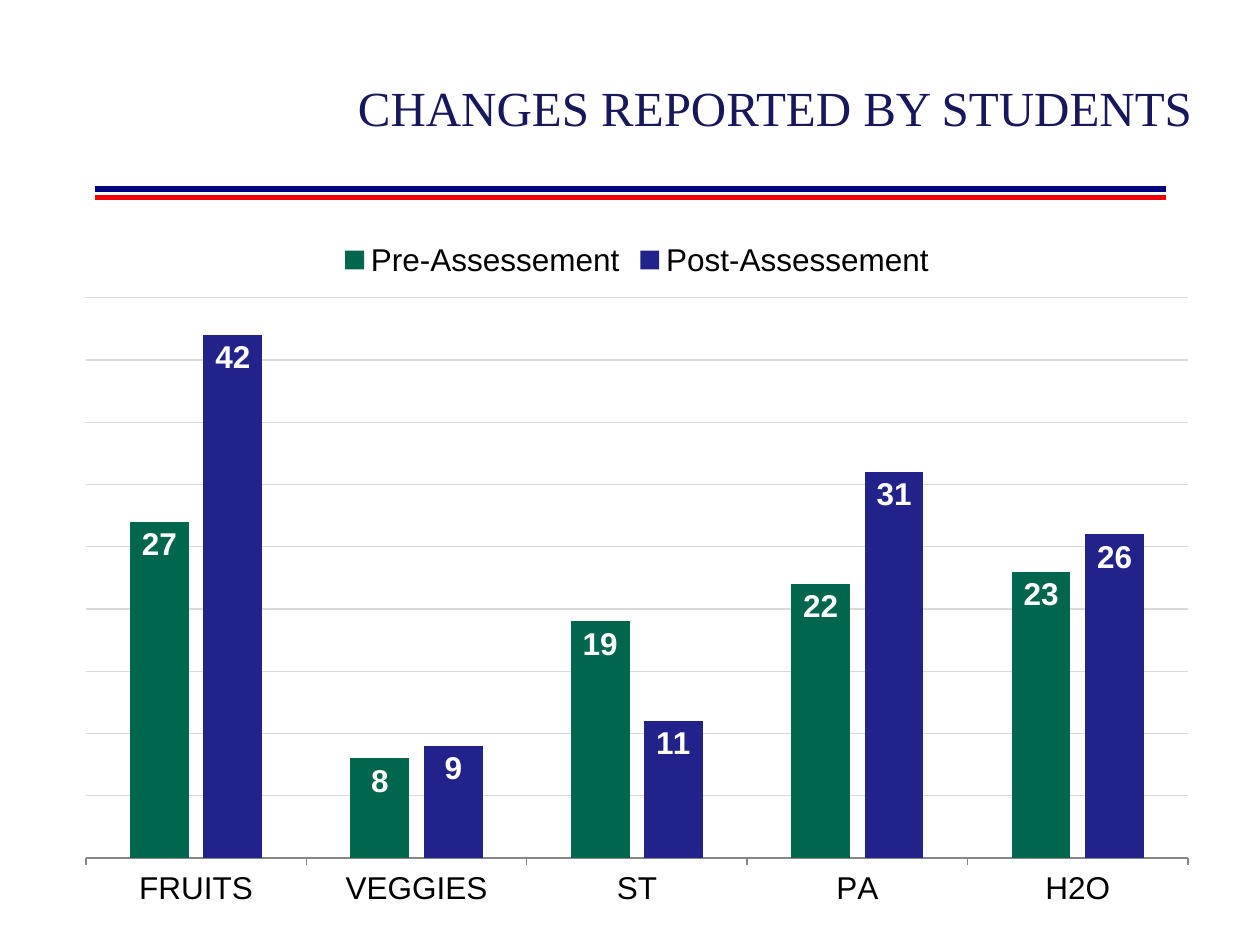
import pptx
import pptx.chart.data
import pptx.dml.color
import pptx.enum.chart
import pptx.enum.shapes
import pptx.enum.text
import pptx.oxml
import pptx.oxml.ns
import pptx.util

Pt = pptx.util.Pt

COLORS = {
    "title": "17175C",
    "rule_blue": "000080",
    "rule_red": "F00000",
    "pre": "00664D",
    "post": "22228B",
    "text": "000000",
    "label": "FFFFFF",
    "grid": "D9D9D9",
    "axis": "878787",
}
CATEGORIES = ["FRUITS", "VEGGIES", "ST", "PA", "H2O"]
SERIES = [
    ("Pre-Assessement", [27, 8, 19, 22, 23], "pre"),
    ("Post-Assessement", [42, 9, 11, 31, 26], "post"),
]


def color(name):
    return pptx.dml.color.RGBColor.from_string(COLORS[name])


def format_font(font, name, size, color_name, bold=False):
    font.name = name
    font.size = Pt(size)
    font.bold = bold
    font.color.rgb = color(color_name)


def add_title(slide, text):
    title = slide.shapes.title
    title.left, title.top = Pt(194.4), Pt(40.3)
    title.width, title.height = Pt(496.8), Pt(41)
    frame = title.text_frame
    frame.word_wrap = False
    frame.auto_size = pptx.enum.text.MSO_AUTO_SIZE.SHAPE_TO_FIT_TEXT
    frame.vertical_anchor = pptx.enum.text.MSO_ANCHOR.MIDDLE
    paragraph = frame.paragraphs[0]
    paragraph.alignment = pptx.enum.text.PP_ALIGN.CENTER
    run = paragraph.add_run()
    run.text = text
    format_font(run.font, "Times New Roman", 28, "title")


def add_rule(slide, top, color_name):
    rule = slide.shapes.add_connector(
        pptx.enum.shapes.MSO_CONNECTOR.STRAIGHT, Pt(54), Pt(top), Pt(666), Pt(top))
    rule.line.color.rgb = color(color_name)
    rule.line.width = Pt(3)
    # An empty effect list removes the theme shadow
    properties = rule._element.spPr
    properties.append(pptx.oxml.parse_xml(
        "<a:effectLst %s/>" % pptx.oxml.ns.nsdecls("a")))


def format_axes(chart):
    category_axis = chart.category_axis
    category_axis.major_tick_mark = pptx.enum.chart.XL_TICK_MARK.OUTSIDE
    category_axis.format.line.color.rgb = color("axis")
    category_axis.format.line.width = Pt(0.75)
    value_axis = chart.value_axis
    value_axis.visible = False
    value_axis.minimum_scale, value_axis.maximum_scale = 0, 45
    value_axis.major_unit = 5
    value_axis.has_major_gridlines = True
    grid_line = value_axis.major_gridlines.format.line
    grid_line.color.rgb = color("grid")
    grid_line.width = Pt(0.75)


def format_series(series, color_name):
    series.invert_if_negative = False
    series.format.fill.solid()
    series.format.fill.fore_color.rgb = color(color_name)
    labels = series.data_labels
    labels.show_value = True
    labels.position = pptx.enum.chart.XL_LABEL_POSITION.INSIDE_END
    format_font(labels.font, "Arial", 18, "label", bold=True)


def add_column_chart(slide):
    data = pptx.chart.data.CategoryChartData()
    data.categories = CATEGORIES
    for name, values, _ in SERIES:
        data.add_series(name, values)
    chart = slide.shapes.add_chart(
        pptx.enum.chart.XL_CHART_TYPE.COLUMN_CLUSTERED,
        Pt(36), Pt(129.6), Pt(656), Pt(396), data).chart
    chart.has_title = False
    format_font(chart.font, "Arial", 18, "text")
    chart.has_legend = True
    chart.legend.position = pptx.enum.chart.XL_LEGEND_POSITION.TOP
    chart.legend.include_in_layout = False
    format_axes(chart)
    plot = chart.plots[0]
    plot.vary_by_categories = False
    plot.gap_width = 150
    plot.overlap = -25
    for series, (_, _, color_name) in zip(plot.series, SERIES):
        format_series(series, color_name)


def main():
    presentation = pptx.Presentation()
    presentation.slide_width, presentation.slide_height = Pt(720), Pt(540)
    title_only = presentation.slide_layouts[5]
    slide = presentation.slides.add_slide(title_only)

    # Double rule under the title
    add_rule(slide, 108, "rule_blue")
    add_rule(slide, 113, "rule_red")

    # Chart and title
    add_column_chart(slide)
    add_title(slide, "CHANGES REPORTED BY STUDENTS")

    presentation.save("out.pptx")


if __name__ == "__main__":
    main()
